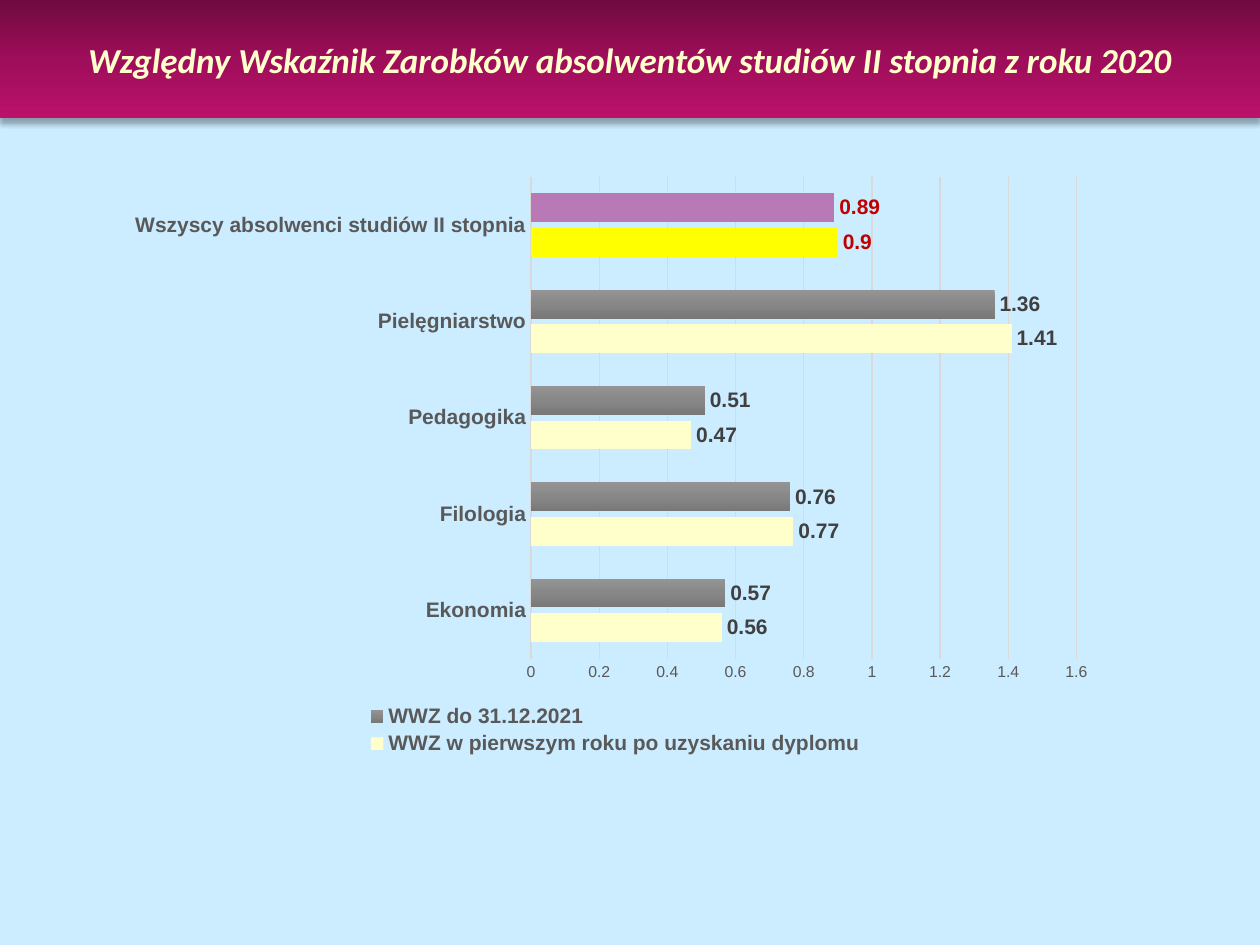
from dataclasses import dataclass
from lxml.etree import SubElement
from pptx import Presentation
from pptx.chart.data import CategoryChartData
from pptx.dml.color import RGBColor
from pptx.enum.chart import XL_CHART_TYPE, XL_LABEL_POSITION, XL_LEGEND_POSITION, XL_TICK_MARK
from pptx.enum.text import MSO_ANCHOR, PP_ALIGN
from pptx.oxml.ns import qn
from pptx.util import Inches, Pt


@dataclass
class Theme:
    back: str = "CCECFF"
    band: tuple = ("6F0A3F", "9E0E5A", "BB116B")
    steel: tuple = ("949494", "878787", "787878")
    cream: str = "FFFFCC"
    gold: str = "FFFF00"
    mauve: str = "B979B6"
    text: str = "595959"
    label: str = "404040"
    alert: str = "C00000"
    grid: str = "D9D9D9"
    head: str = "Calibri"
    body: str = "Arial"
    title: int = 20
    large: int = 12
    base: int = 10
    small: int = 9


class Deck:
    def __init__(self, theme):
        self.theme = theme
        self.prs = Presentation()
        self.prs.slide_width = Inches(10)
        self.prs.slide_height = Inches(7.5)
        self.slide = self.prs.slides.add_slide(self.prs.slide_layouts[5])
        self.paint(self.slide.background.fill, theme.back)

    def paint(self, fill, color):
        fill.solid()
        fill.fore_color.rgb = RGBColor.from_string(color)

    def blend(self, fill, root, colors):
        fill.gradient()
        fill.gradient_angle = 270
        stops = root.find(".//" + qn("a:gsLst"))
        for stop in list(stops):
            stops.remove(stop)
        for i, color in enumerate(colors):
            stop = SubElement(stops, qn("a:gs"), pos=str(i * 50000))
            SubElement(stop, qn("a:srgbClr"), val=color)

    def style(self, font, size, color, bold=False, name=None):
        font.name = name or self.theme.body
        font.size = Pt(size)
        font.bold = bold
        font.color.rgb = RGBColor.from_string(color)

    def shade(self, shape):
        shape.shadow.inherit = False
        effect = shape._element.spPr.find(qn("a:effectLst"))
        outer = SubElement(effect, qn("a:outerShdw"), blurRad=str(Pt(3.5)),
                           dist=str(Pt(2.2)), dir="5400000", rotWithShape="0")
        color = SubElement(outer, qn("a:srgbClr"), val="000000")
        SubElement(color, qn("a:alpha"), val="32000")

    def title(self, text, left, top, width, height):
        box = self.slide.shapes.title
        box.left, box.top = Inches(left), Inches(top)
        box.width, box.height = Inches(width), Inches(height)
        self.blend(box.fill, box._element, self.theme.band)
        self.shade(box)
        frame = box.text_frame
        frame.text = text
        frame.word_wrap = True
        frame.vertical_anchor = MSO_ANCHOR.MIDDLE
        para = frame.paragraphs[0]
        para.alignment = PP_ALIGN.CENTER
        font = para.runs[0].font
        self.style(font, self.theme.title, self.theme.cream, True, self.theme.head)
        font.italic = True

    def place(self, root, index, rect, inner=False):
        for old in root.findall(qn("c:layout")):
            root.remove(old)
        layout = SubElement(root, qn("c:layout"))
        root.insert(index, layout)
        manual = SubElement(layout, qn("c:manualLayout"))
        if inner:
            SubElement(manual, qn("c:layoutTarget"), val="inner")
        for key in ("xMode", "yMode"):
            SubElement(manual, qn("c:" + key), val="edge")
        for key, value in zip("xywh", rect):
            SubElement(manual, qn("c:" + key), val=str(value))

    def axes(self, chart):
        theme = self.theme
        cat, val = chart.category_axis, chart.value_axis
        for axis in (cat, val):
            axis.major_tick_mark = axis.minor_tick_mark = XL_TICK_MARK.NONE
        self.style(cat.tick_labels.font, theme.large, theme.text, True)
        self.style(val.tick_labels.font, theme.small, theme.text)
        cat.has_major_gridlines = False
        val.has_major_gridlines = True
        val.minimum_scale, val.maximum_scale, val.major_unit = 0, 1.6, 0.2
        val.format.line.fill.background()
        for line, width in ((cat.format.line, 1), (val.major_gridlines.format.line, 0.75)):
            self.paint(line.fill, theme.grid)
            line.width = Pt(width)

    def label(self, item, color):
        self.style(item.font, self.theme.large, color, True)
        item.position = XL_LABEL_POSITION.OUTSIDE_END

    def bars(self, names, rows, left, top, width, height):
        theme = self.theme
        data = CategoryChartData()
        data.categories = names
        for name, values, _, _ in rows:
            data.add_series(name, values)
        chart = self.slide.shapes.add_chart(
            XL_CHART_TYPE.BAR_CLUSTERED, Inches(left), Inches(top),
            Inches(width), Inches(height), data).chart
        self.style(chart.font, theme.base, "000000")
        chart.has_title = False
        self.axes(chart)
        plot = chart.plots[0]
        plot.gap_width, plot.overlap = 115, -20
        plot.vary_by_categories = False
        for series, (_, _, color, accent) in zip(plot.series, rows):
            series.invert_if_negative = False
            fill = series.format.fill
            if isinstance(color, tuple):
                self.blend(fill, series._element, color)
            else:
                self.paint(fill, color)
            series.data_labels.show_value = True
            self.label(series.data_labels, theme.label)
            point = series.points[len(names) - 1]
            self.paint(point.format.fill, accent)
            self.label(point.data_label, theme.alert)
        chart.has_legend = True
        legend = chart.legend
        legend.position = XL_LEGEND_POSITION.BOTTOM
        legend.include_in_layout = False
        self.style(legend.font, theme.large, theme.text, True)
        self.place(legend._element, 1, (0.25, 0.9, 0.51, 0.1))
        area = chart._chartSpace.chart.plotArea
        self.place(area, 0, (0.42, 0.02, 0.55, 0.81), True)


def main():
    theme = Theme()
    deck = Deck(theme)
    deck.title("Względny Wskaźnik Zarobków absolwentów studiów II stopnia z roku 2020",
               0, 0, 10, 0.94)
    names = ["Ekonomia", "Filologia", "Pedagogika", "Pielęgniarstwo",
             "Wszyscy absolwenci studiów II stopnia"]
    rows = [
        ("WWZ w pierwszym roku po uzyskaniu dyplomu",
         (0.56, 0.77, 0.47, 1.41, 0.9), theme.cream, theme.gold),
        ("WWZ do 31.12.2021",
         (0.57, 0.76, 0.51, 1.36, 0.89), theme.steel, theme.mauve),
    ]
    deck.bars(names, rows, 0.91, 1.31, 7.87, 4.72)
    deck.prs.save("out.pptx")


if __name__ == "__main__":
    main()
